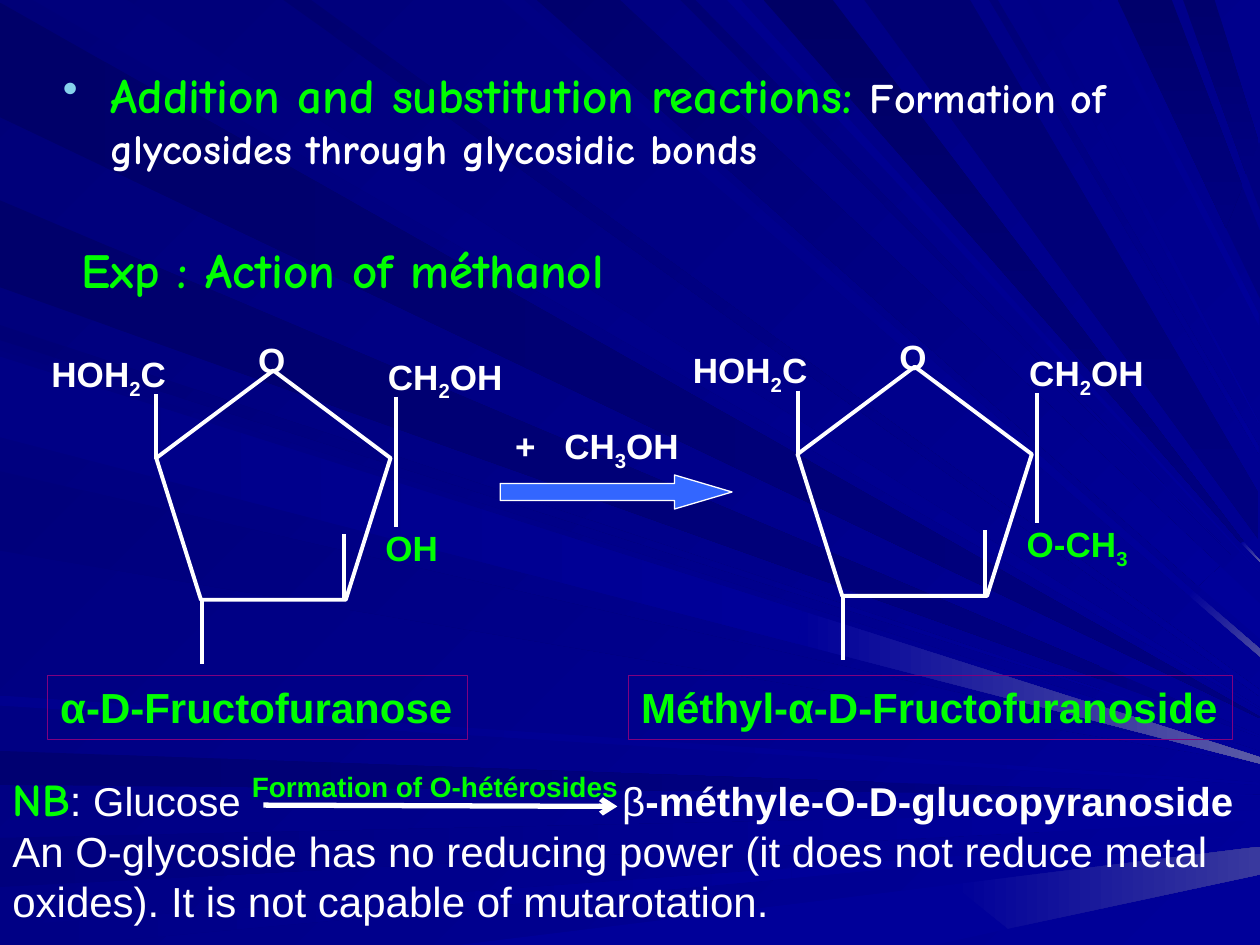
from lxml.etree import SubElement as Sub
from pptx import Presentation as Deck
from pptx.dml.color import RGBColor as Rgb
from pptx.enum.shapes import MSO_CONNECTOR as Link, MSO_SHAPE as Kind
from pptx.enum.text import MSO_ANCHOR as Anchor, PP_ALIGN as Align
from pptx.oxml.ns import qn
from pptx.util import Cm, Pt

WHITE, GREEN = "FFFFFF", "00FF00"
SANS, COMIC = "Arial", "Comic Neue"
NAVY, DARK = "000099", "000080"

RAYS = [
    ("000069", DARK, 0, "5.56 3.17 0 .02 0 .93 5.29 3.45 10 5.7 10 5.69"),
    ("00007B", NAVY, 45, "5.77 2.98 1.01 0 .26 0 5.63 3.1 10 5.63 10 5.62"),
    ("000071", DARK, 0, "0 6.23 7.01 6.29 7.01 6.21 0 5.96"),
    (DARK, NAVY, 0, "10 6.32 10 6.31 7.01 6.21 7.01 6.29"),
    ("00007D", NAVY, 0, "0 7.04 8.31 6.6 8.31 6.47 0 6.65"),
    (NAVY, NAVY, 0, "10 6.51 10 6.43 8.31 6.47 8.31 6.6"),
    (NAVY, NAVY, 0, "10 6.62 6.28 6.89 6.28 6.97"),
    ("000085", NAVY, 0, "0 7.5 .54 7.5 6.28 6.97 6.28 6.89 0 7.35"),
    (NAVY, NAVY, 0, "7.42 7.5 8.01 7.37 7.56 7.02 3.64 7.5"),
    (NAVY, "39399E", 0, "10 6.94 10 6.72 7.56 7.02 8 7.37"),
    (NAVY, NAVY, 0, "10 5.89 8.73 5.47 8.73 5.48"),
    ("000076", NAVY, 45, "0 2.7 8.73 5.48 8.73 5.47 0 2.58"),
    (DARK, NAVY, 0, "10 5.85 10 5.84 8.73 5.29 8.73 5.39"),
    ("00006B", DARK, 0, "0 2.28 8.73 5.39 8.73 5.29 0 1.59"),
    ("000083", NAVY, 45, "3.98 0 9.44 4.73 9.47 4.69 4.16 0"),
    (NAVY, "4A4AA1", 45, "10 5.21 10 5.15 9.47 4.69 9.44 4.73"),
    (NAVY, NAVY, 0, "10 5.07 10 4.79 9.68 4.49 9.51 4.65"),
    ("00006D", NAVY, 45, "4.26 0 9.51 4.65 9.68 4.49 4.92 0"),
    ("FF9999", "FF9999", 0, "10 4.63 9.77 4.4"),
    ("000073", NAVY, 45, "5.4 0 9.77 4.4 5.52 0"),
    ("000065", DARK, 90, "6.06 0 9.85 4.31 9.87 4.3 6.61 0"),
    (NAVY, "5A5AA6", 45, "10 4.46 10 4.45 9.87 4.3 9.85 4.31"),
    (DARK, DARK, 0, "10 2.37 10 1.83 9.86 1.48 9.73 1.81"),
    ("00006B", DARK, 90, "8.87 0 9.73 1.81 9.86 1.48 9.3 0"),
    ("00006D", DARK, 90, "9.64 0 9.39 0 9.89 1.38 9.99 1.13"),
    (DARK, DARK, 0, "9.89 1.38 10 1.67 10 1.14 9.99 1.13"),
    ("00007E", NAVY, 45, "0 3.42 9.99 6.02 9.99 5.96 0 2.78"),
    ("00007B", NAVY, 45, "0 4.37 9.99 6.06 9.99 6.05 0 3.74"),
    ("00008E", NAVY, 0, "0 5.6 9.99 6.23 9.99 6.21 0 5.52"),
    ("000070", NAVY, 45, "2.25 0 9.99 5.52 9.99 5.47 2.47 0"),
    ("00008E", NAVY, 45, "5.77 0 9.99 4.54 9.99 4.53 5.88 0"),
    ("000073", DARK, 90, "7.7 0 6.86 0 9.99 4.28 9.99 3.9 9.98 3.9"),
    ("000078", NAVY, 45, "7.85 0 9.99 3.6 9.99 3.54 7.92 0"),
    ("000085", NAVY, 45, "8.15 0 9.99 3.36 9.99 3.35 8.24 0"),
    ("00008A", NAVY, 45, "9.99 2.49 8.72 0 8.65 0 9.99 2.58"),
    ("000085", NAVY, 0, "0 2.83 0 3.47 6.33 5.11 6.35 4.98 6.37 4.85"),
    (NAVY, "5A5AA6", 0, "10 6.01 6.37 4.85 6.35 4.98 6.33 5.11 10 6.06"),
]


def cm(inch):
    return Cm(inch * 2.54)


def rgb(text):
    return Rgb.from_string(text)


def paint(fill, first, last, angle=0):
    if first == last:
        fill.solid()
        fill.fore_color.rgb = rgb(first)
        return
    fill.gradient()
    fill.gradient_angle = (360 - angle) % 360
    for stop, tint in zip(fill.gradient_stops, (first, last)):
        stop.color.rgb = rgb(tint)


def add_ray(slide, first, last, angle, points):
    nums = [cm(float(n)) for n in points.split()]
    spots = list(zip(nums[::2], nums[1::2]))
    pen = slide.shapes.build_freeform(*spots[0])
    pen.add_line_segments(spots[1:], close=True)
    ray = pen.convert_to_shape()
    ray.shadow.inherit = False
    ray.line.fill.background()
    paint(ray.fill, first, last, angle)


def add_shape(slide, kind, x, y, w, h, edge, width, fill=None):
    shape = slide.shapes.add_shape(kind, cm(x), cm(y), cm(w), cm(h))
    shape.shadow.inherit = False
    shape.line.color.rgb = rgb(edge)
    shape.line.width = Pt(width)
    if fill:
        paint(shape.fill, fill, fill)
    else:
        shape.fill.background()
    return shape


def add_line(slide, x1, y1, x2, y2, width=2.25, head=False):
    line = slide.shapes.add_connector(Link.STRAIGHT, cm(x1), cm(y1), cm(x2), cm(y2))
    line.line.color.rgb = rgb(WHITE)
    line.line.width = Pt(width)
    if head:
        Sub(line.line._get_or_add_ln(), qn("a:tailEnd"), type="arrow")
    Sub(line._element.spPr, qn("a:effectLst"))


def add_run(para, text, size, color=WHITE, font=SANS, bold=True, base=0):
    run = para.add_run()
    run.text = text
    run.font.size = Pt(size)
    run.font.name = font
    run.font.bold = bold
    run.font.color.rgb = rgb(color)
    if base:
        run.font._element.set("baseline", str(base * 1000))


def add_box(slide, x, y, w, h, wrap=True):
    box = slide.shapes.add_textbox(cm(x), cm(y), cm(w), cm(h))
    box.text_frame.word_wrap = wrap
    return box.text_frame.paragraphs[0]


def add_tab(para, place):
    tabs = Sub(para._p.get_or_add_pPr(), qn("a:tabLst"))
    Sub(tabs, qn("a:tab"), pos=str(cm(place)), algn="l")


def add_parts(para, parts, color=WHITE):
    for part in parts:
        add_run(para, part, 20, color, base=-25 if part.isdigit() else 0)


def add_title(slide):
    para = add_box(slide, 0.4, 0.46, 9, 1.14)
    props = para._p.get_or_add_pPr()
    props.set("marL", str(cm(0.38)))
    props.set("indent", str(-cm(0.38)))
    tint = Sub(props, qn("a:buClr"))
    Sub(tint, qn("a:srgbClr"), val="86D1EC")
    Sub(props, qn("a:buSzPct"), val="90000")
    Sub(props, qn("a:buChar"), char="•")
    add_run(para, "Addition and substitution reactions: ", 28, GREEN, COMIC)
    add_run(para, "Formation of glycosides through glycosidic bonds", 24, WHITE, COMIC)


def add_sugar(slide, dx, dy, group, wide):
    add_shape(slide, Kind.REGULAR_PENTAGON, 1.24 + dx, 2.94 + dy, 1.86, 1.82, WHITE, 2.25)
    for x, top, end in ((3.14, 3.15, 4.18), (1.6, 4.77, 5.27),
                        (1.24, 3.13, 3.64), (2.73, 4.24, 4.75)):
        add_line(slide, x + dx, top + dy, x + dx, end + dy)
    for x, y, w, parts, color in (
        (1.95, 2.64, 0.42, ["O"], WHITE),
        (0.31, 2.75, 1.12, ["HOH", "2", "C"], WHITE),
        (2.98, 2.77, 1.12, ["CH", "2", "OH"], WHITE),
        (2.96, 4.13, wide, group, GREEN),
    ):
        add_parts(add_box(slide, x + dx, y + dy, w, 0.43, False), parts, color)


def add_name(slide, x, w, text):
    frame = add_shape(slide, Kind.RECTANGLE, x, 5.36, w, 0.51, "800080", 0.75).text_frame
    frame.word_wrap = False
    frame.vertical_anchor = Anchor.TOP
    para = frame.paragraphs[0]
    para.alignment = Align.LEFT
    add_run(para, text, 24, GREEN)


def add_note(slide):
    para = add_box(slide, 0, 6.07, 10, 1.4)
    add_tab(para, 4.84)
    add_run(para, "NB", 26, GREEN, COMIC)
    add_run(para, ": ", 24, bold=False)
    add_run(para, "Glucose\tβ", 23, bold=False)
    add_run(para, "-méthyle-O-D-glucopyranoside", 23)
    last = para._parent.add_paragraph()
    add_run(last, "An O-glycoside has no reducing power (it does not reduce metal "
            "oxides). It is not capable of mutarotation.", 24, bold=False)
    add_line(slide, 2.09, 6.39, 4.9, 6.4, 3, True)
    add_run(add_box(slide, 1.9, 6.06, 3.24, 0.37), "Formation of O-hétérosides", 16, GREEN)


def main():
    deck = Deck()
    deck.slide_width, deck.slide_height = cm(10), cm(7.5)
    slide = deck.slides.add_slide(deck.slide_layouts[6])
    paint(slide.background.fill, "000078", NAVY, 45)
    for ray in RAYS:
        add_ray(slide, *ray)
    add_title(slide)
    add_sugar(slide, 0, 0, ["OH"], 0.62)
    para = add_box(slide, 3.99, 3.32, 1.6, 0.43)
    add_tab(para, 0.39)
    add_parts(para, ["+\tCH", "3", "OH"])
    add_sugar(slide, 5.09, -0.03, ["O-CH", "3"], 1.02)
    add_name(slide, 0.38, 3.33, "α-D-Fructofuranose")
    add_name(slide, 4.99, 4.79, "Méthyl-α-D-Fructofuranoside")
    arrow = add_shape(slide, Kind.RIGHT_ARROW, 3.97, 3.77, 1.84, 0.27, WHITE, 0.75, "3366FF")
    arrow.adjustments[1] = 1.69
    add_run(add_box(slide, 0.55, 1.85, 5.28, 0.57), "Exp : Action of méthanol", 28, GREEN, COMIC)
    add_note(slide)
    deck.save("out.pptx")


if __name__ == "__main__":
    main()
